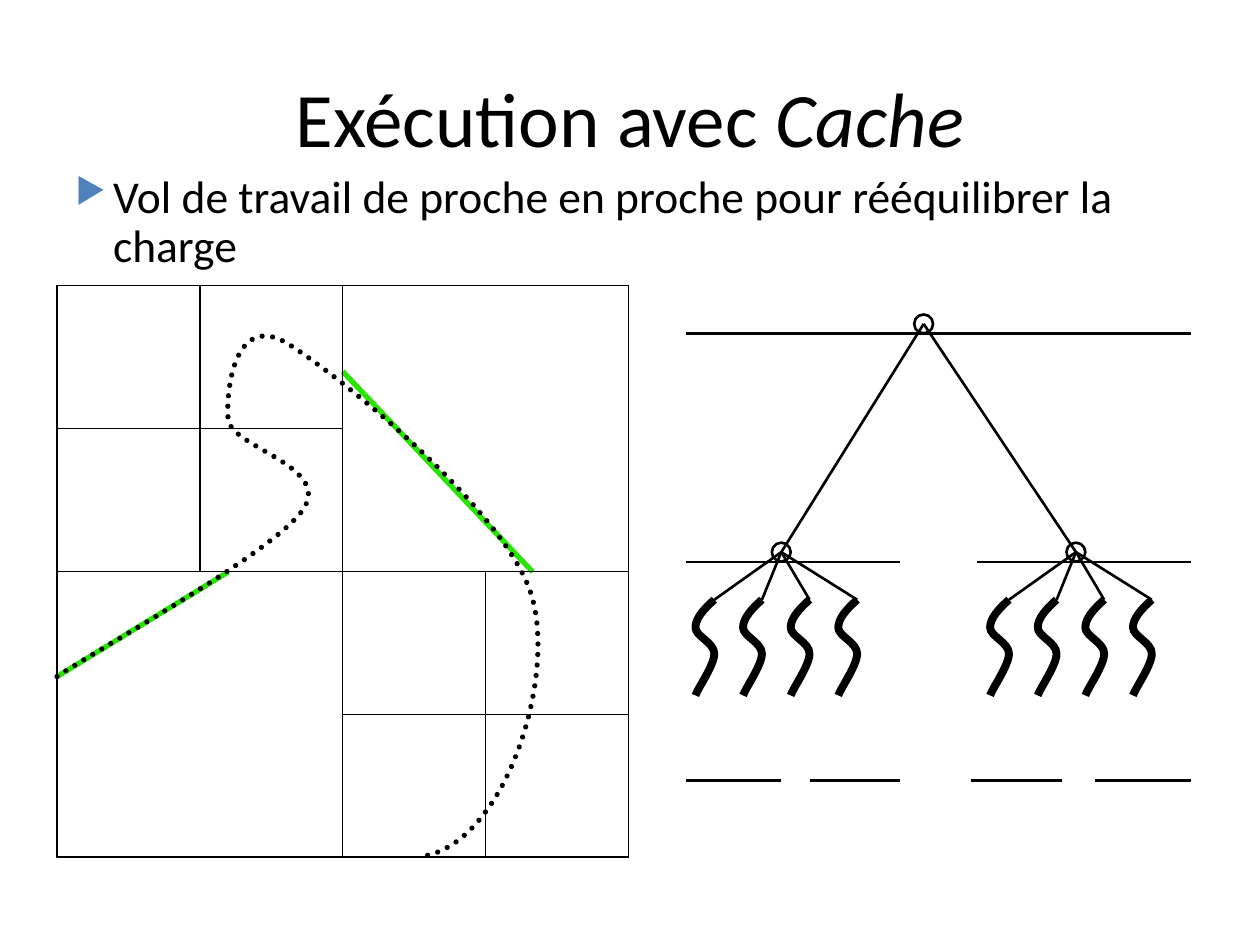
from itertools import product

from lxml import etree
from pptx import Presentation
from pptx.dml.color import RGBColor
from pptx.enum.dml import MSO_LINE
from pptx.enum.shapes import MSO_CONNECTOR, MSO_SHAPE
from pptx.enum.text import MSO_ANCHOR, PP_ALIGN
from pptx.oxml.ns import qn
from pptx.util import Cm, Pt

STRAIGHT = MSO_CONNECTOR.STRAIGHT
RECT, OVAL = MSO_SHAPE.RECTANGLE, MSO_SHAPE.OVAL
DOTTED = MSO_LINE.ROUND_DOT
MIDDLE, TOP = MSO_ANCHOR.MIDDLE, MSO_ANCHOR.TOP
LEFT, CENTER = PP_ALIGN.LEFT, PP_ALIGN.CENTER

BLACK = RGBColor(0x00, 0x00, 0x00)
GREEN = RGBColor(0x27, 0xE5, 0x00)
BLUE = RGBColor(0x4F, 0x81, 0xBD)

# Quadtree grid, in cm
GRID_LEFT, GRID_TOP, CELL = 1.15, 5.76, 2.88
SQUARES = [(0, 0, 4)]
SQUARES += [(x, y, 2) for x, y in product((0, 2), repeat=2)]
SQUARES += [(q + x, q + y, 1) for q in (0, 2) for x, y in product((0, 1), repeat=2)]
CONTOUR = [
    (1.15, 13.64), (1.98, 13.08), (5.54, 11.13), (6.12, 10.26),
    (6.68, 9.4), (4.67, 9.02), (4.6, 8.46),
    (4.55, 7.9), (4.72, 6.3), (5.77, 6.91),
    (6.78, 7.52), (10.31, 10.36), (10.74, 12.09),
    (11.2, 13.82), (10.11, 17.09), (8.46, 17.27),
]
SEGMENTS = [((1.15, 13.64), (4.6, 11.53)), ((6.91, 7.49), (10.74, 11.53))]

# Cache tree, in cm
CACHE_LEVELS = [
    (6.72, [(13.82, 24)]),
    (11.33, [(13.82, 18.14), (19.69, 24)]),
    (15.74, [(13.82, 15.75), (16.33, 18.14), (19.58, 21.41), (22.07, 24)]),
]
ROOT = (18.62, 6.53)
NODES = [(15.75, 11.13), (21.69, 11.13)]
NODE_SIZE = 0.38
THREAD_TOP, THREAD_OFFSET, THREAD_PITCH = 12.09, -1.35, 0.96
THREAD = [
    (0, 0), (-0.2, 0.18), (-0.38, 0.37), (-0.38, 0.56),
    (-0.38, 0.74), (0, 0.86), (0, 1.09),
    (0, 1.32), (-0.33, 1.78), (-0.38, 1.93),
]


class Drawer:
    """Draws styled elements on one slide, with lengths in cm."""

    def __init__(self, slide, font="Calibri"):
        self.slide = slide
        self.shapes = slide.shapes
        self.font = font

    def outline(self, sp, width):
        sp.shadow.inherit = False
        sp.fill.background()
        sp.line.color.rgb = BLACK
        sp.line.width = Pt(width)
        return sp

    def shape(self, kind, x, y, size, width):
        sp = self.shapes.add_shape(kind, Cm(x), Cm(y), Cm(size), Cm(size))
        return self.outline(sp, width)

    def node(self, center):
        x, y = center
        self.shape(OVAL, x - NODE_SIZE / 2, y - NODE_SIZE / 2, NODE_SIZE, 1.5)

    def line(self, start, end, color=BLACK, width=1.5):
        ln = self.shapes.add_connector(STRAIGHT, *map(Cm, start + end))
        ln.line.color.rgb = color
        ln.line.width = Pt(width)
        etree.SubElement(ln._element.spPr, qn("a:effectLst"))

    def curve(self, points, width):
        """Draw cubic Béziers: a start, then two controls and an end for each."""
        start, *rest = [(Cm(x), Cm(y)) for x, y in points]
        builder = self.shapes.build_freeform(*start)
        builder.add_line_segments(rest, close=False)
        sp = self.outline(builder.convert_to_shape(), width)
        steps = list(sp._element.iter(qn("a:lnTo")))
        for i in range(0, len(steps), 3):
            bezier = etree.Element(qn("a:cubicBezTo"))
            steps[i].addprevious(bezier)
            for step in steps[i:i + 3]:
                bezier.append(step[0])
                step.getparent().remove(step)
        return sp

    def dotted_curve(self, points, width):
        sp = self.curve(points, width)
        sp.line.dash_style = DOTTED
        sp._element.spPr.find(qn("a:ln")).set("cap", "rnd")

    def text(self, box, runs, size, align=CENTER, anchor=MIDDLE):
        """Add a paragraph of (text, italic) runs and return it."""
        tf = self.shapes.add_textbox(*map(Cm, box)).text_frame
        tf.word_wrap = True
        tf.vertical_anchor = anchor
        p = tf.paragraphs[0]
        p.alignment = align
        p.font.name = self.font
        p.font.size = Pt(size)
        p.font.color.rgb = BLACK
        for content, italic in runs:
            r = p.add_run()
            r.text = content
            if italic:
                r.font.italic = True
        return p

    def bullet(self, box, content, size):
        p = self.text(box, [(content, False)], size, align=LEFT, anchor=TOP)
        p.line_spacing = 0.9
        p.space_before = Pt(6)
        pPr = p._p.get_or_add_pPr()
        pPr.set("marL", str(Cm(0.76)))
        pPr.set("indent", str(-Cm(0.76)))
        marks = [
            etree.Element(qn("a:buClr")),
            etree.Element(qn("a:buSzPct"), val="76000"),
            etree.Element(qn("a:buChar"), char="▶"),
        ]
        etree.SubElement(marks[0], qn("a:srgbClr"), val=str(BLUE))
        for mark in marks:
            pPr.find(qn("a:defRPr")).addprevious(mark)


def draw_tree(d):
    for y, spans in CACHE_LEVELS:
        for left, right in spans:
            d.line((left, y), (right, y))
    d.node(ROOT)
    for node in NODES:
        d.line(ROOT, node)
        d.node(node)
        for i in range(4):
            x = node[0] + THREAD_OFFSET + i * THREAD_PITCH
            d.line(node, (x, THREAD_TOP))
            d.curve([(x + dx, THREAD_TOP + dy) for dx, dy in THREAD], 4.5)


def draw_quadtree(d):
    for start, end in SEGMENTS:
        d.line(start, end, GREEN, 3)
    for col, row, span in SQUARES:
        d.shape(RECT, GRID_LEFT + col * CELL, GRID_TOP + row * CELL, span * CELL, 0.75)
    d.dotted_curve(CONTOUR, 3)


def main():
    prs = Presentation()
    prs.slide_width, prs.slide_height = Cm(25.4), Cm(19.05)
    d = Drawer(prs.slides.add_slide(prs.slide_layouts[6]))
    d.text((1.27, 0.76, 22.86, 3.18), [("Exécution avec ", False), ("Cache", True)], 44)
    draw_tree(d)
    draw_quadtree(d)
    d.bullet((1.27, 3.38, 22.86, 2.36),
             "Vol de travail de proche en proche pour rééquilibrer la charge", 26)
    prs.save("out.pptx")


if __name__ == "__main__":
    main()
